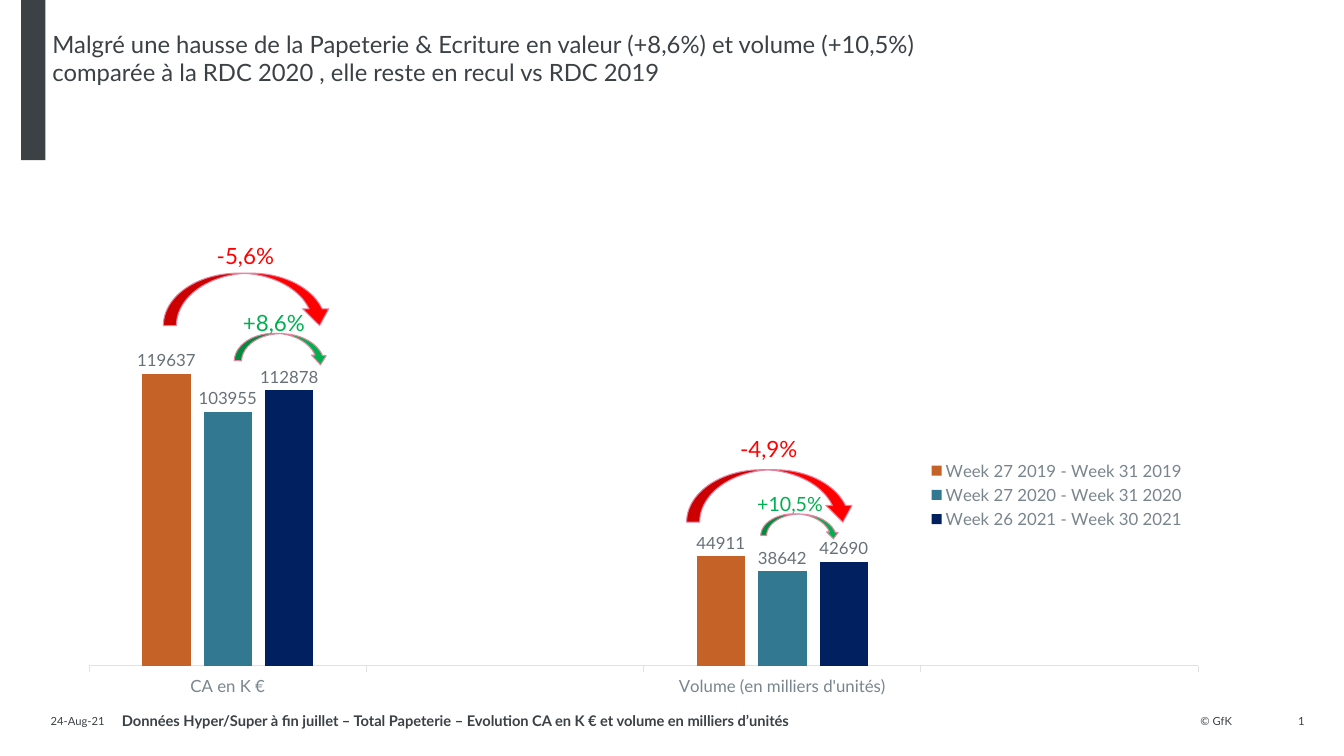
import dataclasses

import pptx
import pptx.chart.data
import pptx.dml.color
import pptx.enum.chart
import pptx.enum.shapes
import pptx.enum.text
import pptx.oxml
import pptx.oxml.ns
import pptx.util

Inches = pptx.util.Inches
Pt = pptx.util.Pt
Align = pptx.enum.text.PP_ALIGN
Anchor = pptx.enum.text.MSO_ANCHOR
qn = pptx.oxml.ns.qn


@dataclasses.dataclass(frozen=True)
class Theme:
    font: str = "Lato"
    ink: str = "3B4145"
    muted: str = "79858D"
    label: str = "677178"
    axis: str = "E0E3E5"
    rise: str = "00B050"
    fall: str = "FF0000"
    outline: str = "E4859F"
    series: tuple = ("C56227", "327890", "002060")
    title_size: float = 17
    large_size: float = 16
    medium_size: float = 14
    chart_size: float = 12
    source_size: float = 10.5
    footer_size: float = 8


def color(value):
    return pptx.dml.color.RGBColor.from_string(value)


def set_font(font, theme, size, ink, bold=False):
    font.name = theme.font
    font.size = Pt(size)
    font.bold = bold
    font.color.rgb = color(ink)


def write_text(box, text, *, theme, size, ink, bold=False, align=Align.LEFT,
               anchor=Anchor.TOP, spacing=1.0):
    frame = box.text_frame
    frame.word_wrap = True
    frame.auto_size = pptx.enum.text.MSO_AUTO_SIZE.NONE
    frame.vertical_anchor = anchor
    frame.margin_left = frame.margin_right = 0
    frame.margin_top = frame.margin_bottom = 0
    para = frame.paragraphs[0]
    para.alignment = align
    para.line_spacing = spacing
    para.space_before = Pt(0)
    span = para.add_run()
    span.text = text
    set_font(span.font, theme, size, ink, bold)
    return para


def chart_xml(tag, content):
    namespaces = pptx.oxml.ns.nsdecls("c", "a")
    return pptx.oxml.parse_xml(f"<c:{tag} {namespaces}>{content}</c:{tag}>")


def place_part(element, position, target, x, y, width, height):
    for old in element.findall(qn("c:layout")):
        element.remove(old)
    inner = f'<c:layoutTarget val="{target}"/>' if target else ""
    inner += '<c:xMode val="edge"/><c:yMode val="edge"/>'
    for key, value in zip("xywh", (x, y, width, height)):
        inner += f'<c:{key} val="{value}"/>'
    element.insert(position, chart_xml("layout", f"<c:manualLayout>{inner}</c:manualLayout>"))


class SlideBuilder:
    def __init__(self, slide, theme):
        self.slide = slide
        self.theme = theme

    def placeholder(self, index, area, text, **style):
        box = self.slide.placeholders[index]
        box.left, box.top, box.width, box.height = map(Inches, area)
        para = write_text(box, text, theme=self.theme, **style)
        properties = para._p.get_or_add_pPr()
        properties.set("marL", "0")
        properties.set("indent", "0")
        bullet = pptx.oxml.parse_xml(f'<a:buNone {pptx.oxml.ns.nsdecls("a")}/>')
        properties.append(bullet)

    def text(self, area, text, **style):
        box = self.slide.shapes.add_textbox(*map(Inches, area))
        write_text(box, text, theme=self.theme, **style)

    def shape(self, kind, area, fill, outline=None):
        shape = self.slide.shapes.add_shape(kind, *map(Inches, area))
        shape.shadow.inherit = False
        shape.fill.solid()
        shape.fill.fore_color.rgb = color(fill)
        if outline:
            shape.line.color.rgb = color(outline)
            shape.line.width = Pt(0.75)
        else:
            shape.line.fill.background()
        return shape

    def arrow(self, area, fill, head=0.32, rotation=0):
        kind = pptx.enum.shapes.MSO_SHAPE.CURVED_DOWN_ARROW
        arrow = self.shape(kind, area, fill, self.theme.outline)
        for index, value in enumerate((0.25, 0.5, head)):
            arrow.adjustments[index] = value
        arrow.rotation = rotation

    def column_chart(self, area, categories, series, plot_area, legend_area, maximum):
        theme = self.theme
        data = pptx.chart.data.CategoryChartData()
        data.categories = categories
        for name, values in series:
            data.add_series(name, values)
        kind = pptx.enum.chart.XL_CHART_TYPE.COLUMN_CLUSTERED
        chart = self.slide.shapes.add_chart(kind, *map(Inches, area), data).chart
        set_font(chart.font, theme, theme.chart_size, theme.ink)
        chart.has_title = False

        plot = chart.plots[0]
        plot.vary_by_categories = False
        plot.gap_width = 219
        plot.overlap = -27
        for column, fill in zip(plot.series, theme.series):
            column.format.fill.solid()
            column.format.fill.fore_color.rgb = color(fill)
            labels = column.data_labels
            labels.show_value = True
            labels.position = pptx.enum.chart.XL_LABEL_POSITION.OUTSIDE_END
            set_font(labels.font, theme, theme.chart_size, theme.label)

        axis = chart.category_axis
        axis.major_tick_mark = pptx.enum.chart.XL_TICK_MARK.OUTSIDE
        axis.format.line.color.rgb = color(theme.axis)
        axis.format.line.width = Pt(0.75)
        set_font(axis.tick_labels.font, theme, theme.chart_size, theme.muted)
        values_axis = chart.value_axis
        values_axis.minimum_scale = 0
        values_axis.maximum_scale = maximum
        values_axis.has_major_gridlines = False
        values_axis.visible = False

        chart.has_legend = True
        legend = chart.legend
        legend.position = pptx.enum.chart.XL_LEGEND_POSITION.RIGHT
        legend.include_in_layout = False
        set_font(legend.font, theme, theme.chart_size, theme.muted)
        place_part(legend._element, 1, None, *legend_area)

        space = chart._chartSpace
        plot_element = space.chart.plotArea
        place_part(plot_element, 0, "inner", *plot_area)
        plot_element.append(chart_xml("spPr", "<a:noFill/>"))
        space.chart.addnext(chart_xml("spPr", "<a:noFill/><a:ln><a:noFill/></a:ln>"))


def main():
    theme = Theme()
    deck = pptx.Presentation()
    deck.slide_width = Inches(13.33)
    deck.slide_height = Inches(7.5)
    page = SlideBuilder(deck.slides.add_slide(deck.slide_layouts[1]), theme)

    page.shape(pptx.enum.shapes.MSO_SHAPE.RECTANGLE, (0.21, 0, 0.24, 1.59), theme.ink)
    page.placeholder(
        0, (0.52, 0.29, 9.4, 1.32),
        "Malgré une hausse de la Papeterie & Ecriture en valeur (+8,6%) et volume (+10,5%) "
        "comparée à la RDC 2020 , elle reste en recul vs RDC 2019",
        size=theme.title_size, ink=theme.ink)

    for left, width, text in ((0.21, 0.83, "24-Aug-21"), (11.67, 0.55, "© GfK"),
                              (12.23, 0.71, "1")):
        page.text((left, 7.07, width, 0.15), text, size=theme.footer_size,
                  ink=theme.ink, align=Align.RIGHT, anchor=Anchor.BOTTOM)

    page.arrow((7.55, 5.1, 0.78, 0.23), theme.rise, head=0.29, rotation=2.9)
    page.arrow((2.33, 3.31, 0.93, 0.29), theme.rise, rotation=2.9)
    for left, top in ((1.62, 2.71), (6.81, 4.66)):
        page.arrow((left, top, 1.68, 0.52), theme.fall)

    page.column_chart(
        (0.66, 2.79, 11.23, 4.24),
        ("CA en K €", "", "Volume (en milliers d'unités)", ""),
        (("Week 27 2019 - Week 31 2019", (119637, None, 44911, None)),
         ("Week 27 2020 - Week 31 2020", (103955, None, 38642, None)),
         ("Week 26 2021 - Week 30 2021", (112878, None, 42690, None))),
        plot_area=(0.02, 0.1, 0.98, 0.8),
        legend_area=(0.76, 0.41, 0.23, 0.18),
        maximum=140000)

    for area, text, size, ink in (
            ((2.41, 3, 0.8, 0.27), "+8,6%", theme.large_size, theme.rise),
            ((2.15, 2.34, 1.16, 0.27), "-5,6%", theme.large_size, theme.fall),
            ((7.34, 4.25, 1.05, 0.53), "-4,9%", theme.large_size, theme.fall),
            ((7.51, 4.82, 1.14, 0.27), "+10,5%", theme.medium_size, theme.rise)):
        page.text(area, text, size=size, ink=ink, spacing=1.25)

    page.placeholder(
        1, (1.21, 7.07, 8.93, 0.15),
        "Données Hyper/Super à fin juillet – Total Papeterie – "
        "Evolution CA en K € et volume en milliers d’unités",
        size=theme.source_size, ink=theme.ink, bold=True, anchor=Anchor.MIDDLE)
    deck.save("out.pptx")


if __name__ == "__main__":
    main()
